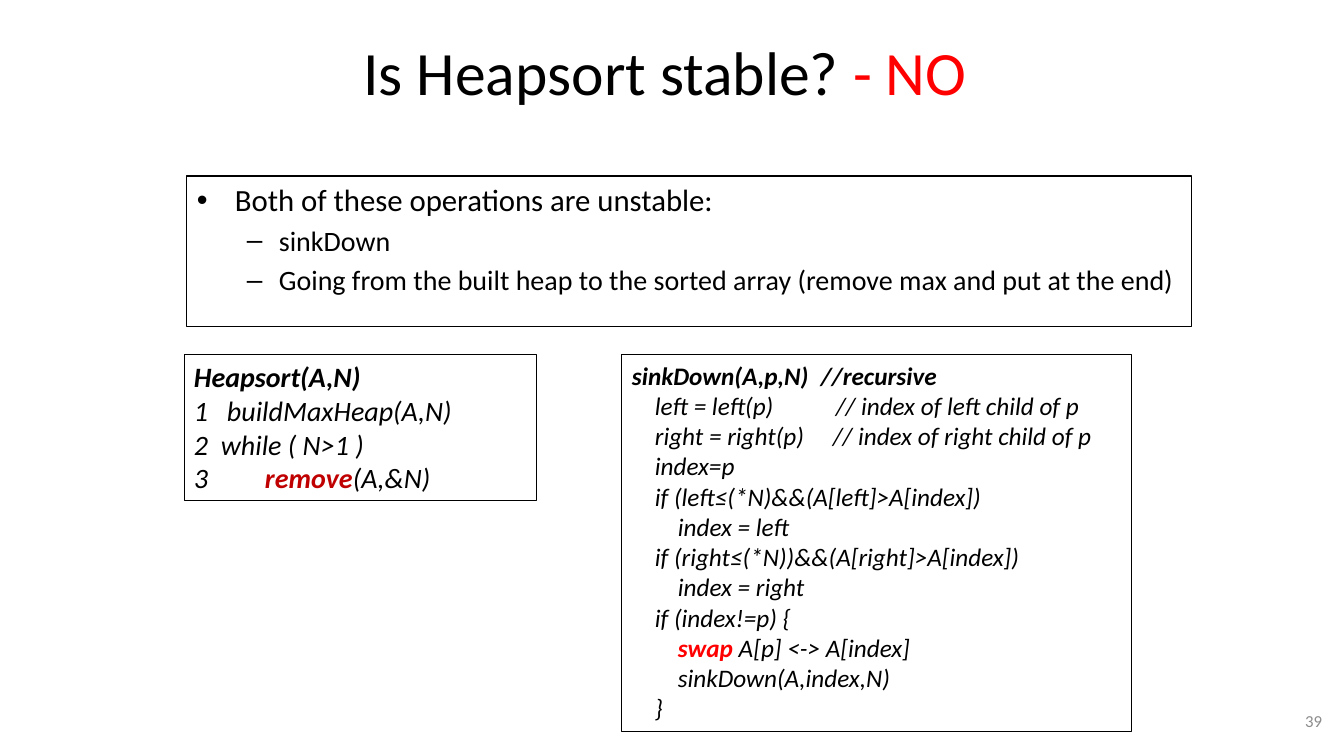
import dataclasses

import lxml.etree
import pptx
import pptx.dml.color
import pptx.enum.shapes
import pptx.enum.text
import pptx.oxml.ns
import pptx.util

EMU_PER_PX = 914400 / 100.8
ALIGN = pptx.enum.text.PP_ALIGN
ANCHOR = pptx.enum.text.MSO_ANCHOR
AUTO_SIZE = pptx.enum.text.MSO_AUTO_SIZE


@dataclasses.dataclass(frozen=True)
class Theme:
    font: str = "Calibri"
    background: str = "FFFFFF"
    ink: str = "000000"
    alert: str = "FF0000"
    deep_alert: str = "C00000"
    muted: str = "8C8C8C"
    title: int = 44
    point: int = 22
    subpoint: int = 20
    heapsort_code: int = 20
    sink_code: int = 18
    number: int = 12
    outline: float = 0.75


THEME = Theme()
INDENT = 23
DEEP = 2 * INDENT


def px(value):
    return pptx.util.Emu(round(value * EMU_PER_PX))


def rgb(value):
    return pptx.dml.color.RGBColor.from_string(value)


def add_xml(parent, tag, **attributes):
    element = lxml.etree.SubElement(parent, pptx.oxml.ns.qn(tag))
    for name, value in attributes.items():
        element.set(name, str(value))
    return element


def set_attributes(target, values):
    for name, value in values.items():
        setattr(target, name, value)


def add_run(paragraph, text, size, color=THEME.ink, **formats):
    run = paragraph.add_run()
    run.text = text
    values = {"name": THEME.font, "size": pptx.util.Pt(size), **formats}
    set_attributes(run.font, values)
    run.font.color.rgb = rgb(color)


def next_paragraph(frame, index):
    return frame.paragraphs[0] if index == 0 else frame.add_paragraph()


def add_text(slide, bounds, runs, size, alignment):
    frame = slide.shapes.add_textbox(*map(px, bounds)).text_frame
    set_attributes(frame, {"word_wrap": True, "vertical_anchor": ANCHOR.MIDDLE})
    paragraph = frame.paragraphs[0]
    paragraph.alignment = alignment
    for text, color in runs:
        add_run(paragraph, text, size, color)


def add_box(slide, bounds, auto_size):
    shape = slide.shapes.add_shape(
        pptx.enum.shapes.MSO_SHAPE.RECTANGLE, *map(px, bounds))
    shape.shadow.inherit = False
    shape.fill.background()
    shape.line.color.rgb = rgb(THEME.ink)
    shape.line.width = pptx.util.Pt(THEME.outline)
    set_attributes(shape.text_frame, {
        "word_wrap": True, "vertical_anchor": ANCHOR.TOP, "auto_size": auto_size})
    return shape.text_frame


def add_bullets(slide, bounds, items):
    styles = [
        {"bullet": "•", "size": THEME.point, "left": 38, "hanging": 38},
        {"bullet": "–", "size": THEME.subpoint, "left": 82, "hanging": 32},
    ]
    frame = add_box(slide, bounds, AUTO_SIZE.NONE)
    for index, (level, text) in enumerate(items):
        style = styles[level]
        paragraph = next_paragraph(frame, index)
        set_attributes(paragraph, {
            "level": level, "alignment": ALIGN.LEFT,
            "space_before": pptx.util.Pt(style["size"] / 5)})
        properties = paragraph._p.get_or_add_pPr()
        properties.set("marL", str(px(style["left"])))
        properties.set("indent", str(-px(style["hanging"])))
        add_xml(properties, "a:buFont", typeface="Arial")
        add_xml(properties, "a:buChar", char=style["bullet"])
        add_run(paragraph, text, style["size"])


def add_code(slide, bounds, lines, size):
    frame = add_box(slide, bounds, AUTO_SIZE.SHAPE_TO_FIT_TEXT)
    for index, (stops, *runs) in enumerate(lines):
        paragraph = next_paragraph(frame, index)
        paragraph.alignment = ALIGN.LEFT
        if stops:
            tabs = add_xml(paragraph._p.get_or_add_pPr(), "a:tabLst")
            for stop in stops:
                add_xml(tabs, "a:tab", pos=px(stop), algn="l")
        for text, *color in runs:
            bold = index == 0 or bool(color)
            add_run(paragraph, text, size, *color, bold=bold, italic=True)


def main():
    presentation = pptx.Presentation()
    set_attributes(presentation, {"slide_width": px(1344), "slide_height": px(756)})
    slide = presentation.slides.add_slide(presentation.slide_layouts[6])
    slide.background.fill.solid()
    slide.background.fill.fore_color.rgb = rgb(THEME.background)

    add_text(slide, (67, 8, 1210, 126),
             [("Is Heapsort stable?", THEME.ink), (" - NO ", THEME.alert)],
             THEME.title, ALIGN.CENTER)
    add_bullets(slide, (187, 176, 1005, 151), [
        (0, "Both of these operations are unstable:"),
        (1, "sinkDown"),
        (1, "Going from the built heap to the sorted array "
            "(remove max and put at the end)"),
    ])
    add_text(slide, (1019, 701, 313, 40), [("39", THEME.muted)],
             THEME.number, ALIGN.RIGHT)
    add_code(slide, (184, 355, 353, 146), [
        ([], ("Heapsort(A,N)",)),
        ([33], ("1\tbuildMaxHeap(A,N)",)),
        ([27], ("2\twhile ( N>1 )",)),
        ([71], ("3\t",), ("remove", THEME.deep_alert), ("(A,&N)",)),
    ], THEME.heapsort_code)
    add_code(slide, (622, 355, 510, 377), [
        ([189], ("sinkDown(A,p,N)\t//recursive",)),
        ([INDENT, 204], ("\tleft = left(p)\t// index of left child of p",)),
        ([INDENT, 201], ("\tright = right(p)\t// index of right child of p",)),
        ([INDENT], ("\tindex=p",)),
        ([INDENT], ("\tif (left≤(*N)&&(A[left]>A[index])",)),
        ([DEEP], ("\tindex = left",)),
        ([INDENT], ("\tif (right≤(*N))&&(A[right]>A[index])",)),
        ([DEEP], ("\tindex = right",)),
        ([INDENT], ("\tif (index!=p) {",)),
        ([DEEP], ("\t",), ("swap", THEME.alert), (" A[p] <-> A[index]",)),
        ([DEEP], ("\tsinkDown(A,index,N)",)),
        ([INDENT], ("\t}",)),
    ], THEME.sink_code)
    presentation.save("out.pptx")


if __name__ == "__main__":
    main()
